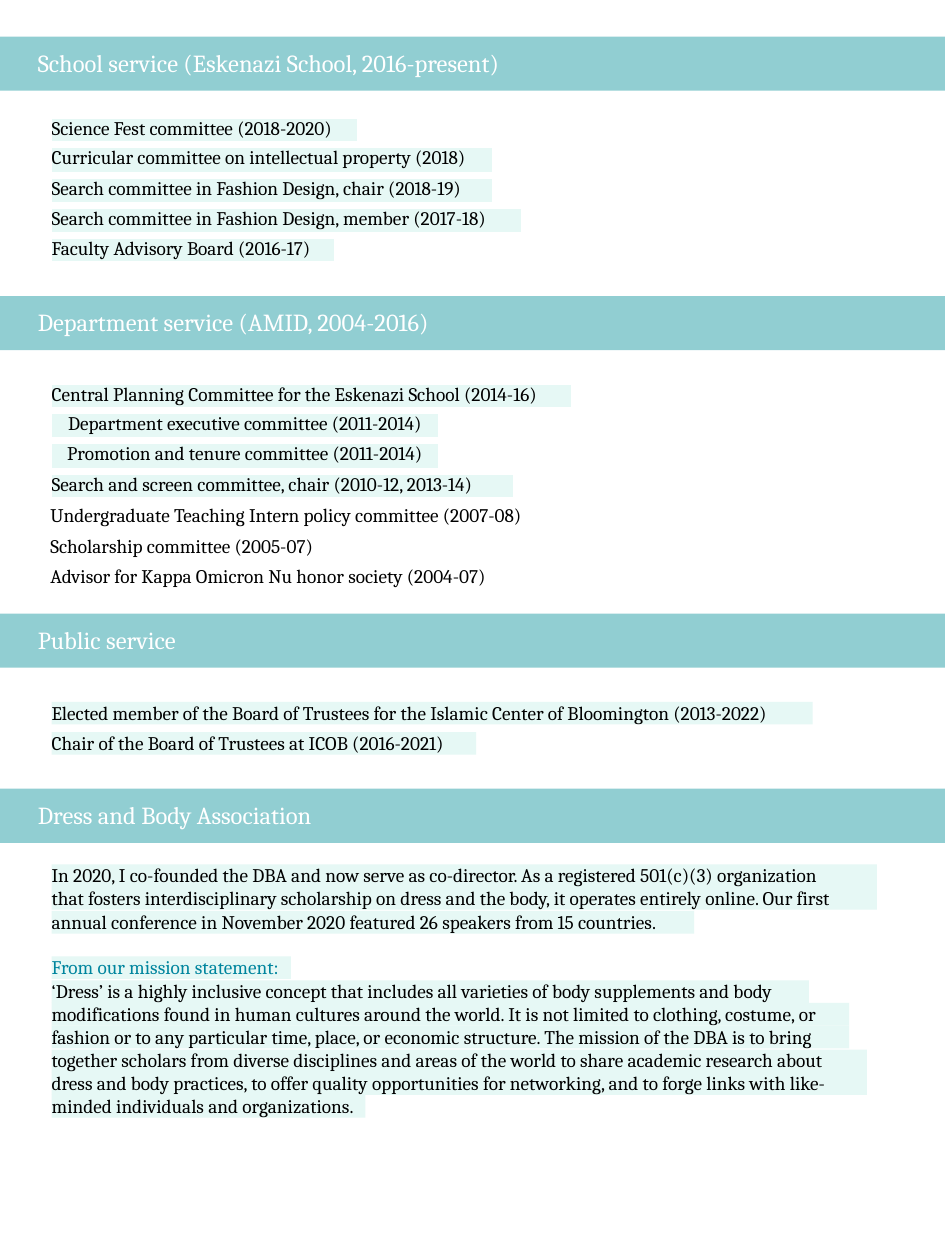
from dataclasses import dataclass

from lxml import etree
from pptx import Presentation
from pptx import util as u
from pptx.dml.color import RGBColor
from pptx.enum import shapes, text
from pptx.oxml.ns import qn


@dataclass(frozen=True)
class Theme:
    font: str = "Cambria"
    head: int = 14
    body: int = 11
    band: str = "91CED2"
    tint: str = "E6F8F5"
    white: str = "FFFFFF"
    ink: str = "000000"
    teal: str = "00859E"
    gap: float = 4.5


T = Theme()
LEFT = 41


def px(n):
    """100 px to the inch."""
    return u.Emu(n * 9144)


def style(par, size, color, lead=None, before=0):
    par.font.name, par.font.size = T.font, u.Pt(size)
    par.font.bold = False
    par.font.color.rgb = RGBColor.from_string(color)
    par.space_before = u.Pt(before)
    par.alignment = text.PP_ALIGN.LEFT
    if lead:
        par.line_spacing = lead


def frame(shape, top=0):
    tf = shape.text_frame
    tf.word_wrap = True
    tf.auto_size = text.MSO_AUTO_SIZE.NONE
    tf.vertical_anchor = text.MSO_ANCHOR.TOP
    tf.margin_left = tf.margin_right = tf.margin_bottom = 0
    tf.margin_top = px(top)
    return tf


def block(slide, box, color):
    shape = slide.shapes.add_shape(shapes.MSO_SHAPE.RECTANGLE, *map(px, box))
    shape.shadow.inherit = False
    shape.fill.solid()
    shape.fill.fore_color.rgb = RGBColor.from_string(color)
    shape.line.fill.background()
    return shape


def header(slide, y, label, width, title=False):
    """Full-width band with its heading."""
    band = block(slide, (0, y, 750, 43), T.band)
    box = [px(n) for n in (30, y + 8, width, 26)]
    if title:
        head = slide.shapes.title
        head.left, head.top, head.width, head.height = box
        band._element.addnext(head._element)
    else:
        head = slide.shapes.add_textbox(*box)
    tf = frame(head, 1)
    tf.text = label
    style(tf.paragraphs[0], T.head, T.white, 1.0, 1)


def strip(slide, y, width, label, color=T.ink):
    """One tinted line of text."""
    tf = frame(block(slide, (LEFT, y, width, 18), T.tint))
    tf.text = label
    style(tf.paragraphs[0], T.body, color, u.Pt(12.7))


def edge(cell, side):
    """White rule on one side of a cell; must come before the fill."""
    ln = etree.SubElement(cell._tc.get_or_add_tcPr(), qn("a:" + side), w=str(u.Pt(T.gap)))
    fill = etree.SubElement(ln, qn("a:solidFill"))
    etree.SubElement(fill, qn("a:srgbClr"), val=T.white)


def roster(slide, y, cols, labels, spans, mid=()):
    """Table of committees; spans are (row, col, last row, last col)."""
    last = len(labels) - 1
    rows = [21 if r in (0, last) else 24 for r in range(last + 1)]
    tbl = slide.shapes.add_table(
        len(rows), len(cols), px(LEFT), px(y), px(sum(cols)), px(sum(rows))).table
    tbl.first_row = tbl.horz_banding = False
    for col, w in zip(tbl.columns, cols):
        col.width = px(w)
    for r, (row, h) in enumerate(zip(tbl.rows, rows)):
        row.height = px(h)
        for c, cell in enumerate(row.cells):
            cell.margin_left = cell.margin_right = cell.margin_bottom = 0
            cell.margin_top = px(2 if r else 0)
            if r > 0:
                edge(cell, "lnT")
            if r < last:
                edge(cell, "lnB")
            if c == 0:
                cell.fill.solid()
                cell.fill.fore_color.rgb = RGBColor.from_string(T.tint)
                cell.text = labels[r]
            else:
                cell.fill.background()
            par = cell.text_frame.paragraphs[0]
            lead = u.Pt(12.7) if r in (0, last) else None
            style(par, T.body, T.ink, lead, 1.5 if r else 0)
            if c == 0 and r in mid:
                par.alignment = text.PP_ALIGN.CENTER
            if c:
                par.font.size = u.Pt(8)
    for r, c, r2, c2 in spans:
        tbl.cell(r, c).merge(tbl.cell(r2, c2))


def notes(slide, y, labels):
    """Plain lines below a table."""
    tf = frame(slide.shapes.add_textbox(px(40), px(y), px(420), px(75)), 1)
    for i, label in enumerate(labels):
        par = tf.paragraphs[0] if i == 0 else tf.add_paragraph()
        par.text = label
        final = i == len(labels) - 1
        style(par, T.body, T.ink, 1.0 if final else 1.31, 4 if final else 1 - i)


def main():
    prs = Presentation()
    prs.slide_width, prs.slide_height = px(750), px(1000)
    slide = prs.slides.add_slide(prs.slide_layouts[5])

    # School service
    header(slide, 29, "School service (Eskenazi School, 2016-present)", 394, True)
    roster(slide, 94, (225, 18, 107, 23), (
        "Science Fest committee (2018-2020)",
        "Curricular committee on intellectual property (2018)",
        "Search committee in Fashion Design, chair (2018-19)",
        "Search committee in Fashion Design, member (2017-18)",
        "Faculty Advisory Board (2016-17)",
    ), ((0, 0, 0, 1), (0, 2, 0, 3), (1, 0, 1, 2), (1, 3, 2, 3),
        (2, 0, 2, 2), (3, 0, 3, 3), (4, 1, 4, 3)))

    # Department service
    header(slide, 235, "Department service (AMID, 2004-2016)", 334)
    roster(slide, 305, (307, 60, 46), (
        "Central Planning Committee for the Eskenazi School (2014-16)",
        "Department executive committee (2011-2014)",
        "Promotion and tenure committee (2011-2014)",
        "Search and screen committee, chair (2010-12, 2013-14)",
    ), ((0, 0, 0, 2), (1, 1, 2, 2), (3, 0, 3, 1)), mid=(1, 2))
    notes(slide, 393, (
        "Undergraduate Teaching Intern policy committee (2007-08)",
        "Scholarship committee (2005-07)",
        "Advisor for Kappa Omicron Nu honor society (2004-07)",
    ))

    # Public service
    header(slide, 487, "Public service", 130)
    strip(slide, 557, 604, "Elected member of the Board of Trustees for the "
          "Islamic Center of Bloomington (2013-2022)")
    strip(slide, 581, 337, "Chair of the Board of Trustees at ICOB (2016-2021)")

    # Association: evenly led lines, with one line left open after the intro
    header(slide, 626, "Dress and Body Association", 232)
    lines = (
        (0, 655, "In 2020, I co-founded the DBA and now serve as co-director. "
         "As a registered 501(c)(3) organization"),
        (1, 655, "that fosters interdisciplinary scholarship on dress and the body, "
         "it operates entirely online. Our first"),
        (2, 510, "annual conference in November 2020 featured 26 speakers from 15 countries."),
        (4, 190, "From our mission statement:"),
        (5, 601, "‘Dress’ is a highly inclusive concept that includes all varieties "
         "of body supplements and body"),
        (6, 633, "modifications found in human cultures around the world. "
         "It is not limited to clothing, costume, or"),
        (7, 633, "fashion or to any particular time, place, or economic structure. "
         "The mission of the DBA is to bring"),
        (8, 647, "together scholars from diverse disciplines and areas of the world "
         "to share academic research about"),
        (9, 647, "dress and body practices, to offer quality opportunities for "
         "networking, and to forge links with like-"),
        (10, 249, "minded individuals and organizations."),
    )
    for i, width, label in lines:
        strip(slide, 686 + round(i * 55 / 3), width, label, T.teal if i == 4 else T.ink)

    prs.save("out.pptx")


if __name__ == "__main__":
    main()
